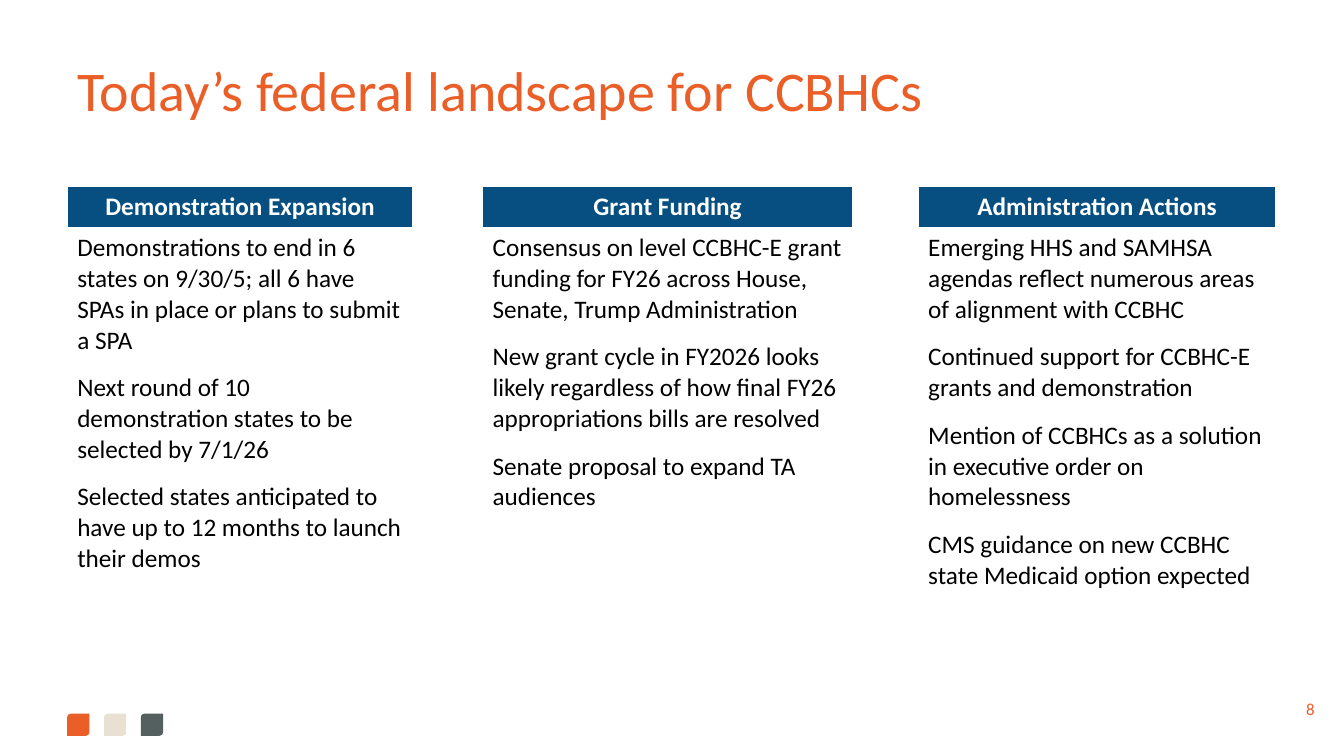
from dataclasses import dataclass

from pptx import Presentation
from pptx.dml.color import RGBColor
from pptx.enum.shapes import MSO_SHAPE
from pptx.enum.text import MSO_ANCHOR, MSO_AUTO_SIZE, PP_ALIGN
from pptx.util import Inches, Pt

LEFT = PP_ALIGN.LEFT
CENTER = PP_ALIGN.CENTER
MIDDLE = MSO_ANCHOR.MIDDLE
NO_AUTO_SIZE = MSO_AUTO_SIZE.NONE
DIAGONAL_ROUND = MSO_SHAPE.ROUND_2_DIAG_RECTANGLE
TITLE_ONLY = 5

SLIDE_WIDTH = Inches(13.33)
SLIDE_HEIGHT = Inches(7.5)
FONT_NAME = "Calibri"
COLORS = {
    "orange": "EA5E28",
    "sand": "E8E0D1",
    "slate": "53605F",
    "navy": "064F80",
    "white": "FFFFFF",
    "black": "000000",
}

TITLE_FORMAT = {"size": Pt(40), "bold": False}
NUMBER_FORMAT = {"size": Pt(12), "bold": False}
HEADING_FORMAT = {"size": Pt(18), "bold": True}
BODY_FORMAT = {"size": Pt(18), "bold": False}

MARGIN = 5
CONTENT_WIDTH = 90
GAP_WIDTHS = [5.18, 4.88]
TABLE_TOP = 24.67
ROW_HEIGHTS = [5.47, 48]
SQUARE_SIZE = 1.65
SQUARE_STEP = 2.74
SQUARE_TOP = 94.4


@dataclass
class Topic:
    width: float
    heading: str
    points: list[str]


TOPICS = [
    Topic(25.73, "Demonstration Expansion", [
        "Demonstrations to end in 6 states on 9/30/5; all 6 have SPAs in place or plans to submit a SPA",
        "Next round of 10 demonstration states to be selected by 7/1/26",
        "Selected states anticipated to have up to 12 months to launch their demos",
    ]),
    Topic(27.53, "Grant Funding", [
        "Consensus on level CCBHC-E grant funding for FY26 across House, Senate, Trump Administration",
        "New grant cycle in FY2026 looks likely regardless of how final FY26 appropriations bills are resolved",
        "Senate proposal to expand TA audiences",
    ]),
    Topic(26.63, "Administration Actions", [
        "Emerging HHS and SAMHSA agendas reflect numerous areas of alignment with CCBHC",
        "Continued support for CCBHC-E grants and demonstration",
        "Mention of CCBHCs as a solution in executive order on homelessness",
        "CMS guidance on new CCBHC state Medicaid option expected",
    ]),
]


def across(percent: float) -> int:
    return round(SLIDE_WIDTH * percent / 100)


def down(percent: float) -> int:
    return round(SLIDE_HEIGHT * percent / 100)


def color(name: str) -> RGBColor:
    return RGBColor.from_string(COLORS[name])


def write(paragraph, text: str, font_format: dict, color_name: str, alignment) -> None:
    paragraph.text = text
    paragraph.alignment = alignment
    paragraph.font.name = FONT_NAME
    paragraph.font.color.rgb = color(color_name)
    for attribute, value in font_format.items():
        setattr(paragraph.font, attribute, value)


def fill(target, color_name: str) -> None:
    target.fill.solid()
    target.fill.fore_color.rgb = color(color_name)


def add_squares(slide) -> None:
    for index, color_name in enumerate(["orange", "sand", "slate"]):
        square = slide.shapes.add_shape(
            DIAGONAL_ROUND, across(MARGIN + index * SQUARE_STEP), down(SQUARE_TOP),
            across(SQUARE_SIZE), across(SQUARE_SIZE))
        square.shadow.inherit = False
        square.line.fill.background()
        fill(square, color_name)


def format_title(slide) -> None:
    title = slide.shapes.title
    title.left, title.top = across(MARGIN), down(5.33)
    title.width, title.height = across(CONTENT_WIDTH), down(14.13)
    frame = title.text_frame
    frame.auto_size = NO_AUTO_SIZE
    frame.vertical_anchor = MIDDLE
    paragraph = frame.paragraphs[0]
    write(paragraph, "Today’s federal landscape for CCBHCs", TITLE_FORMAT, "orange", LEFT)
    paragraph.line_spacing = 0.9


def add_slide_number(slide) -> None:
    box = slide.shapes.add_textbox(across(95), down(91.07), across(5), down(5.33))
    frame = box.text_frame
    frame.word_wrap = True
    frame.vertical_anchor = MIDDLE
    write(frame.paragraphs[0], "8", NUMBER_FORMAT, "orange", CENTER)


def fill_topic(table, column: int, topic: Topic) -> None:
    table.columns[column].width = across(topic.width)
    heading = table.cell(0, column)
    fill(heading, "navy")
    write(heading.text_frame.paragraphs[0], topic.heading, HEADING_FORMAT, "white", CENTER)
    frame = table.cell(1, column).text_frame
    for index, point in enumerate(topic.points):
        paragraph = frame.add_paragraph() if index else frame.paragraphs[0]
        write(paragraph, point, BODY_FORMAT, "black", LEFT)
        paragraph.space_after = Pt(12)


def add_topic_table(slide) -> None:
    column_count = len(TOPICS) + len(GAP_WIDTHS)
    table = slide.shapes.add_table(
        len(ROW_HEIGHTS), column_count, across(MARGIN), down(TABLE_TOP),
        across(CONTENT_WIDTH), down(sum(ROW_HEIGHTS))).table
    table.first_row = False
    table.horz_banding = False
    for row, height in zip(table.rows, ROW_HEIGHTS):
        row.height = down(height)
    for column in range(column_count):
        fill(table.cell(0, column), "white")
        table.cell(1, column).fill.background()
    for index, topic in enumerate(TOPICS):
        fill_topic(table, 2 * index, topic)
    for index, width in enumerate(GAP_WIDTHS):
        table.columns[2 * index + 1].width = across(width)


def main() -> None:
    presentation = Presentation()
    presentation.slide_width = SLIDE_WIDTH
    presentation.slide_height = SLIDE_HEIGHT
    slide = presentation.slides.add_slide(presentation.slide_layouts[TITLE_ONLY])
    fill(slide.background, "white")
    add_squares(slide)
    format_title(slide)
    add_slide_number(slide)
    add_topic_table(slide)
    presentation.save("out.pptx")


if __name__ == "__main__":
    main()
